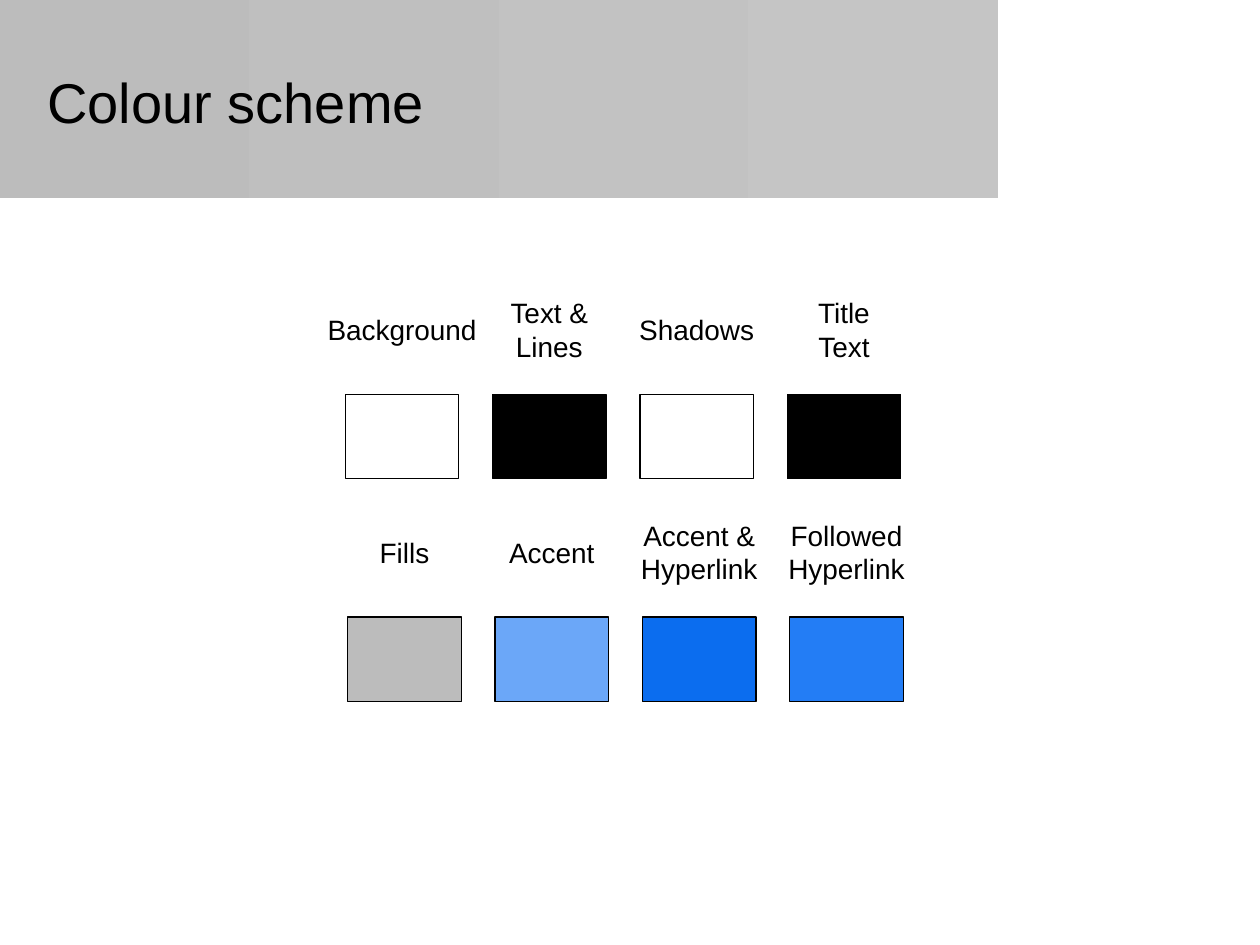
from pptx import Presentation
from pptx.dml.color import RGBColor
from pptx.enum.shapes import MSO_SHAPE as Shape
from pptx.enum.text import MSO_ANCHOR as Anchor, MSO_AUTO_SIZE as AutoSize, PP_ALIGN as Align
from pptx.util import Cm, Pt

FONT = "Arial"
COLOURS = {
    "white": "FFFFFF",
    "black": "000000",
    "grey": "BCBCBC",
    "pale grey": "C5C5C5",
    "light blue": "6BA7F8",
    "blue": "0B6DEF",
    "mid blue": "237DF5",
}

# Label, label width in cm, swatch colour
BASE_COLOURS = [
    ("Background", 3.55, "white"),
    ("Text &\nLines", 2.13, "black"),
    ("Shadows", 2.84, "white"),
    ("Title\vText", 1.6, "black"),
]
ACCENT_COLOURS = [
    ("Fills", 1.52, "grey"),
    ("Accent", 2.26, "light blue"),
    ("Accent &\nHyperlink", 2.95, "blue"),
    ("Followed\nHyperlink", 2.95, "mid blue"),
]

SWATCH_WIDTH, SWATCH_HEIGHT = 2.29, 1.7
COLUMN_PITCH = 2.97
LABEL_RISE = 1.31  # from the middle of a label down to the top of its swatch


def rgb(name):
    return RGBColor.from_string(COLOURS[name])


def set_font(paragraph, size):
    paragraph.font.name = FONT
    paragraph.font.size = Pt(size)
    paragraph.font.color.rgb = rgb("black")


def add_header(slide, left, top, width, height):
    # Band, placed behind the title
    band = slide.shapes.add_shape(Shape.RECTANGLE, Cm(left), Cm(top), Cm(width), Cm(height))
    band.shadow.inherit = False
    band.line.fill.background()
    band.fill.gradient()
    band.fill.gradient_angle = 0
    for stop, name in zip(band.fill.gradient_stops, ("grey", "pale grey")):
        stop.color.rgb = rgb(name)
    slide.shapes._spTree.insert(2, band._element)

    # Title
    title = slide.shapes.title
    title.left, title.top = Cm(left + 0.7), Cm(top + 0.76)
    title.width, title.height = Cm(width - 1.12), Cm(2.57)
    frame = title.text_frame
    frame.text = "Colour scheme"
    frame.auto_size = AutoSize.NONE
    frame.vertical_anchor = Anchor.MIDDLE
    frame.paragraphs[0].alignment = Align.LEFT
    set_font(frame.paragraphs[0], 32)


def add_label(slide, text, centre, middle, width):
    height = 0.25 + 0.68 * len(text.splitlines())
    label = slide.shapes.add_textbox(
        Cm(centre - width / 2), Cm(middle - height / 2), Cm(width), Cm(height))
    frame = label.text_frame
    frame.word_wrap = False
    frame.auto_size = AutoSize.SHAPE_TO_FIT_TEXT
    frame.text = text
    for paragraph in frame.paragraphs:
        paragraph.alignment = Align.CENTER
        set_font(paragraph, 16)


def add_swatch_row(slide, left, top, entries):
    for column, (text, label_width, colour) in enumerate(entries):
        x = left + column * COLUMN_PITCH
        swatch = slide.shapes.add_shape(
            Shape.RECTANGLE, Cm(x), Cm(top), Cm(SWATCH_WIDTH), Cm(SWATCH_HEIGHT))
        swatch.shadow.inherit = False
        swatch.fill.solid()
        swatch.fill.fore_color.rgb = rgb(colour)
        swatch.line.color.rgb = rgb("black")
        swatch.line.width = Pt(0.75)
        add_label(slide, text, x + SWATCH_WIDTH / 2, top - LABEL_RISE, label_width)


def main():
    deck = Presentation()
    deck.slide_width, deck.slide_height = Cm(25.4), Cm(19.05)
    slide = deck.slides.add_slide(deck.slide_layouts[5])
    add_header(slide, 0, 0, 20.12, 4)
    add_swatch_row(slide, 6.96, 7.95, BASE_COLOURS)
    add_swatch_row(slide, 7.01, 12.44, ACCENT_COLOURS)
    deck.save("out.pptx")


if __name__ == "__main__":
    main()
